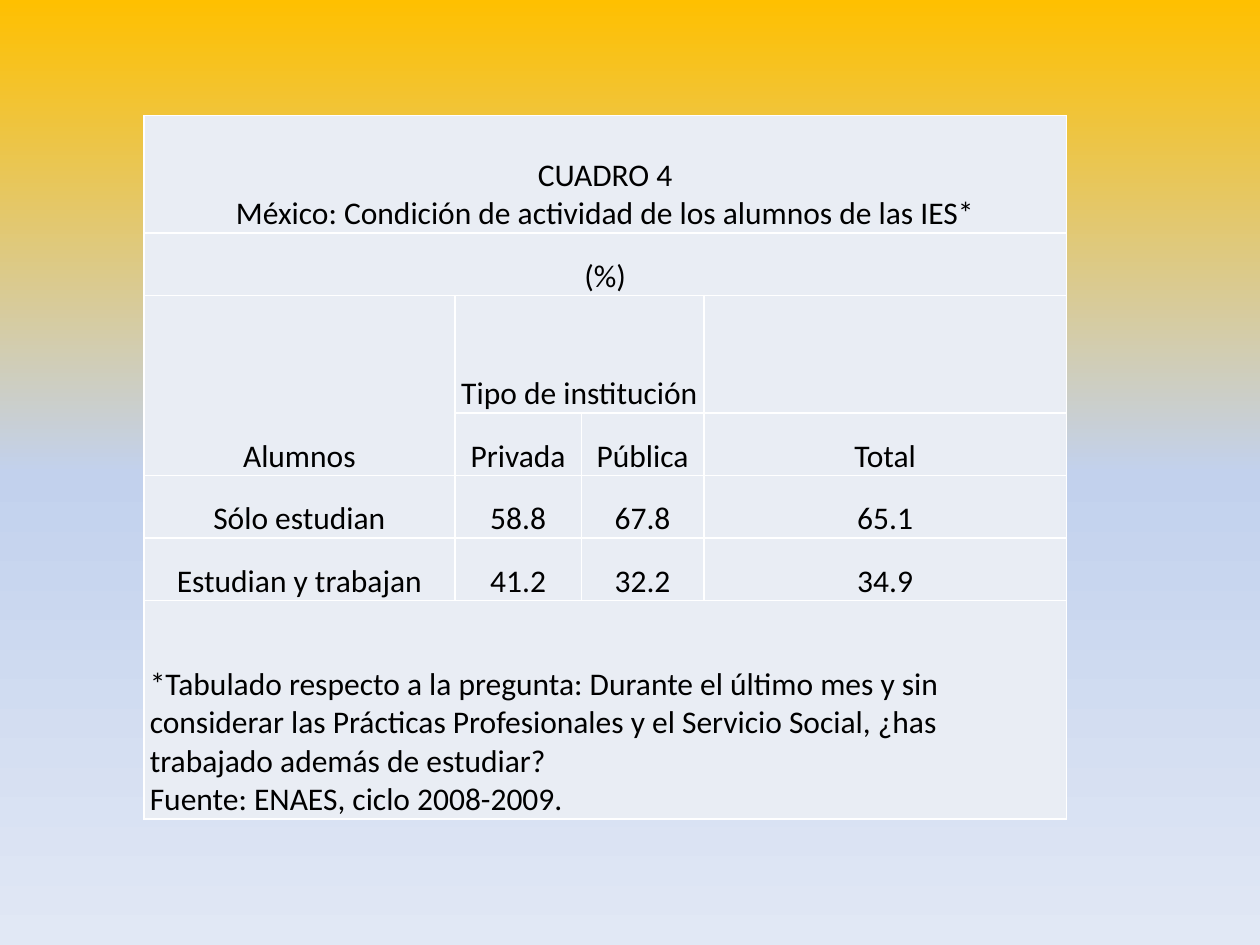
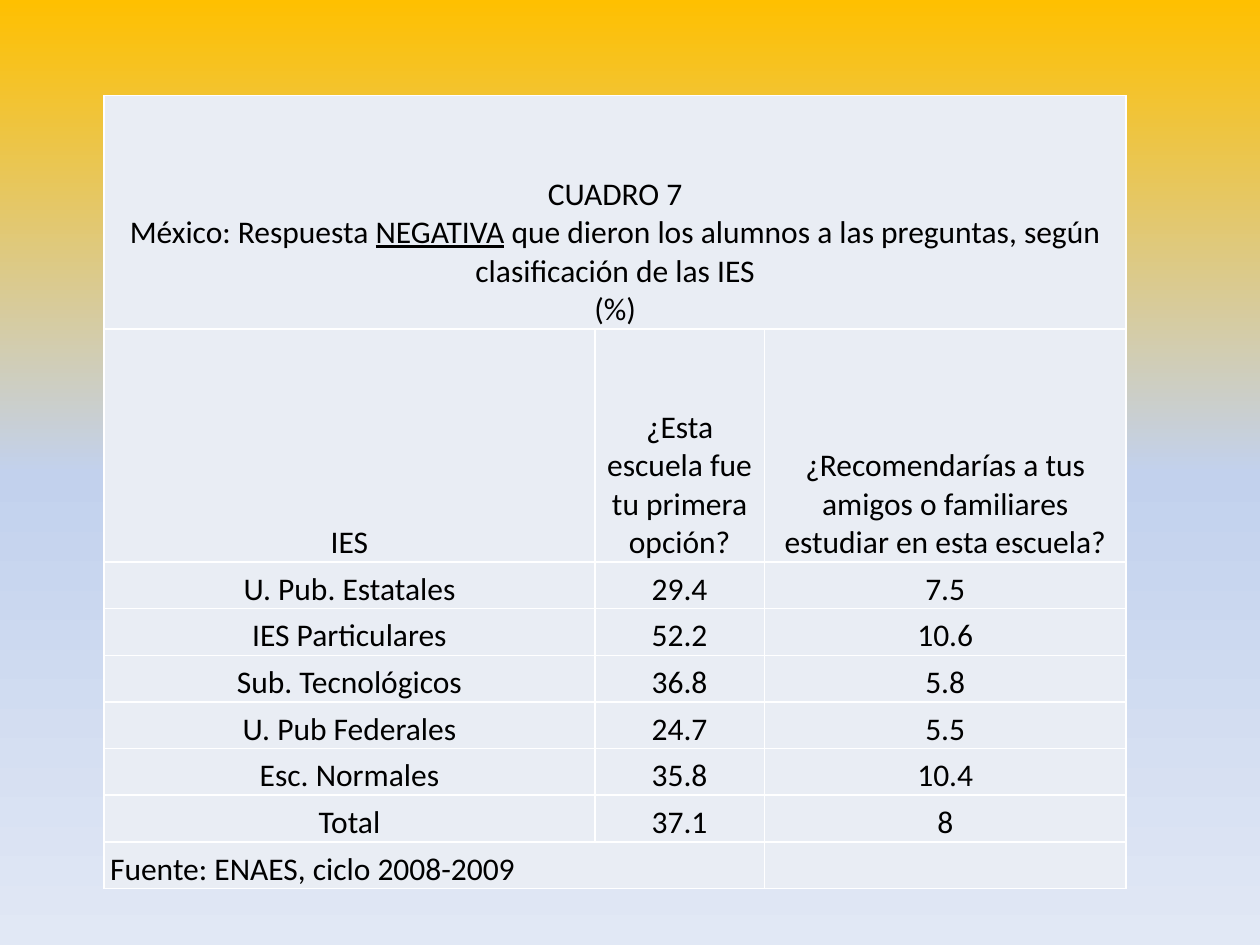
import copy

import pptx
import pptx.dml.color
import pptx.enum.text
import pptx.oxml
import pptx.oxml.ns
import pptx.util

Cm, Pt = pptx.util.Cm, pptx.util.Pt
PP_ALIGN = pptx.enum.text.PP_ALIGN

# Shared look
GRADIENT = [(0, "FFC000"), (0.5, "C2D1ED"), (1, "E1E8F5")]
CELL_FILL, BORDER, INK = "E9EDF4", "FFFFFF", "000000"
FONT = {"name": "Calibri", "size": Pt(18), "bold": False}
CELL = {
    "margin_left": Cm(0.12), "margin_right": Cm(0.12),
    "margin_top": 0, "margin_bottom": 0,
    "vertical_anchor": pptx.enum.text.MSO_ANCHOR.BOTTOM,
}
PLAIN_TABLE = {"first_row": False, "horz_banding": False}
UNDERLINE = {"underline": True}

# Student activity: a cell is a text or a list of paragraphs
ACTIVITY_ROWS = [
    [["CUADRO 4",
      "México: Condición de actividad de los alumnos de las IES*"], "", "", ""],
    ["(%)", "", "", ""],
    ["Alumnos", "Tipo de institución", "", ""],
    ["", "Privada", "Pública", "Total"],
    ["Sólo estudian", "58.8", "67.8", "65.1"],
    ["Estudian y trabajan", "41.2", "32.2", "34.9"],
    [["*Tabulado respecto a la pregunta: Durante el último mes y sin "
      "considerar las Prácticas Profesionales y el Servicio Social, "
      "¿has trabajado además de estudiar?",
      "Fuente: ENAES, ciclo 2008-2009."], "", "", ""],
]

# Negative answers: a paragraph is a text or a list of (text, format) runs
ANSWER_ROWS = [
    [["CUADRO 7",
      [("México: Respuesta ", {}), ("NEGATIVA", UNDERLINE),
       (" que dieron los alumnos a las preguntas, según clasificación "
        "de las IES", {})],
      "(%)"], "", ""],
    ["IES", "¿Esta escuela fue tu primera opción?",
     "¿Recomendarías a tus amigos o familiares estudiar en esta escuela?"],
    ["U. Pub. Estatales", "29.4", "7.5"],
    ["IES Particulares", "52.2", "10.6"],
    ["Sub. Tecnológicos", "36.8", "5.8"],
    ["U. Pub Federales", "24.7", "5.5"],
    ["Esc. Normales", "35.8", "10.4"],
    ["Total", "37.1", "8"],
    ["Fuente: ENAES, ciclo 2008-2009", "", ""],
]


def rgb(value):
    return pptx.dml.color.RGBColor.from_string(value)


def set_attrs(obj, values):
    for name, value in values.items():
        setattr(obj, name, value)


def set_background(master):
    fill = master.background.fill
    fill.gradient()
    fill.gradient_angle = 270
    # The new gradient has two stops, so add the middle one
    stop_list = master.element.find(".//" + pptx.oxml.ns.qn("a:gsLst"))
    stop_list.insert(1, copy.deepcopy(stop_list[0]))
    for stop, (position, color) in zip(fill.gradient_stops, GRADIENT):
        stop.position = position
        stop.color.rgb = rgb(color)


def set_borders(cell):
    tc_pr = cell._tc.get_or_add_tcPr()
    for i, side in enumerate("LRTB"):
        tc_pr.insert(i, pptx.oxml.parse_xml(
            f'<a:ln{side} {pptx.oxml.ns.nsdecls("a")} w="{Pt(1)}"><a:solidFill>'
            f'<a:srgbClr val="{BORDER}"/></a:solidFill></a:ln{side}>'))


def write_cell(cell, content, align):
    tf = cell.text_frame
    paragraphs = content if isinstance(content, list) else [content]
    for i, runs in enumerate(paragraphs):
        p = tf.add_paragraph() if i else tf.paragraphs[0]
        p.alignment = align
        set_attrs(p.font, FONT)
        for text, extra in [(runs, {})] if isinstance(runs, str) else runs:
            if text:
                r = p.add_run()
                r.text = text
                set_attrs(r.font, {**FONT, **extra})
                r.font.color.rgb = rgb(INK)


def add_data_table(prs, left, top, widths, heights, rows, spans):
    """Each span is (row, column, last row, last column)."""
    slide = prs.slides.add_slide(prs.slide_layouts[6])
    table = slide.shapes.add_table(
        len(rows), len(widths), Cm(left), Cm(top),
        Cm(sum(widths)), Cm(sum(heights))).table
    set_attrs(table, PLAIN_TABLE)
    for column, width in zip(table.columns, widths):
        column.width = Cm(width)
    for row, height in zip(table.rows, heights):
        row.height = Cm(height)

    for i, contents in enumerate(rows):
        # The closing row holds the source note
        align = PP_ALIGN.LEFT if i == len(rows) - 1 else PP_ALIGN.CENTER
        for j, content in enumerate(contents):
            cell = table.cell(i, j)
            set_attrs(cell, CELL)
            cell.fill.solid()
            cell.fill.fore_color.rgb = rgb(CELL_FILL)
            set_borders(cell)
            write_cell(cell, content, align)
    for row, col, last_row, last_col in spans:
        table.cell(row, col).merge(table.cell(last_row, last_col))


def main():
    prs = pptx.Presentation()
    prs.slide_width, prs.slide_height = Cm(25.4), Cm(19.05)
    set_background(prs.slide_master)

    add_data_table(
        prs, 2.9, 2.33, [6.27, 2.55, 2.47, 7.31],
        [2.37, 1.26, 2.37, 1.26, 1.26, 1.26, 4.4], ACTIVITY_ROWS,
        [(0, 0, 0, 3), (1, 0, 1, 3), (2, 0, 3, 0), (2, 1, 2, 2), (6, 0, 6, 3)])
    add_data_table(
        prs, 2.1, 1.93, [9.89, 3.42, 7.29],
        [4.7] * 2 + [0.94] * 7, ANSWER_ROWS,
        [(0, 0, 0, 2), (8, 0, 8, 1)])

    prs.save("out.pptx")


if __name__ == "__main__":
    main()
